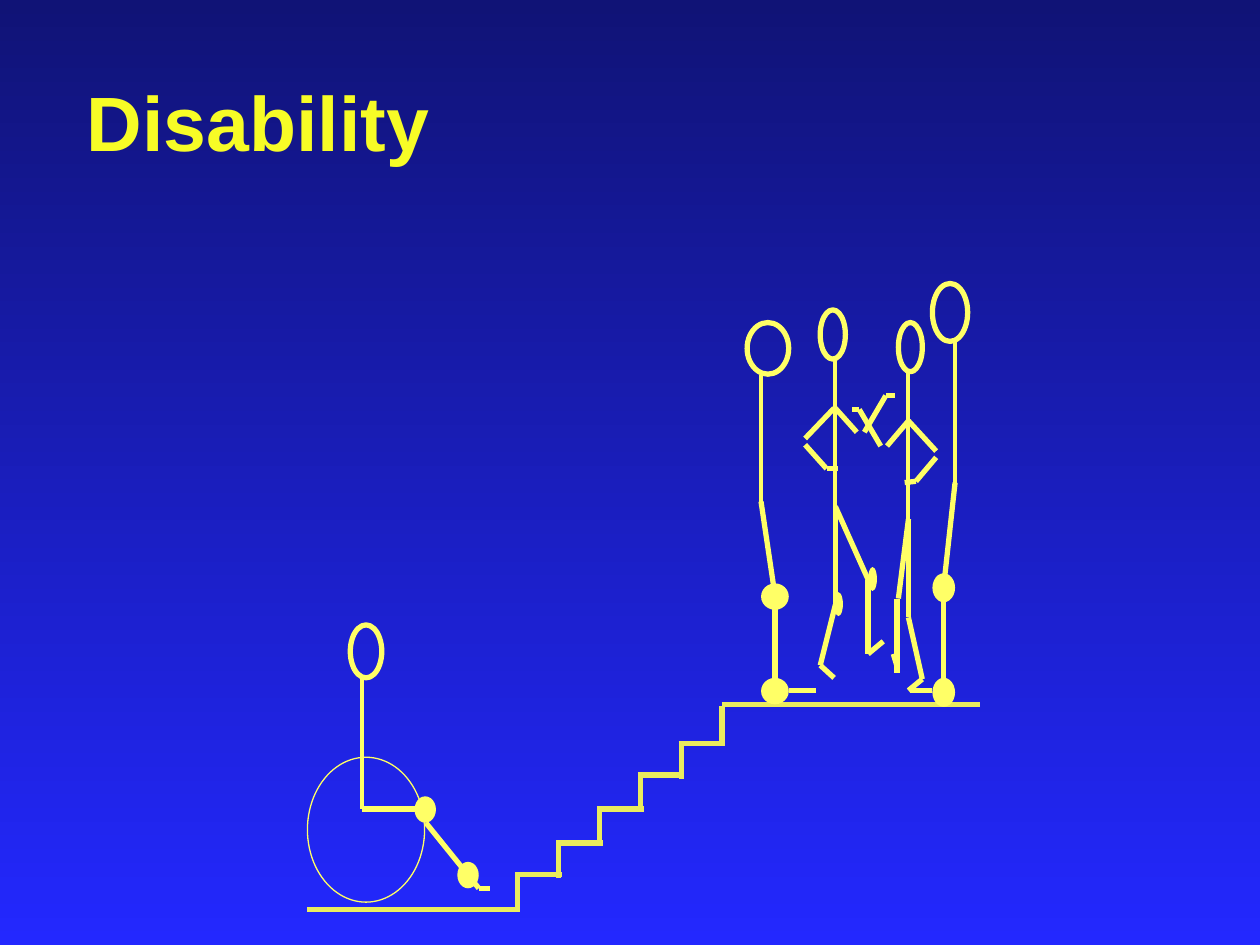
from itertools import pairwise

from lxml import etree
from pptx import Presentation
from pptx.dml.color import RGBColor
from pptx.enum.shapes import MSO_CONNECTOR, MSO_SHAPE
from pptx.enum.text import MSO_ANCHOR, PP_ALIGN
from pptx.oxml.ns import qn
from pptx.util import Inches, Pt

STRAIGHT = MSO_CONNECTOR.STRAIGHT
OVAL = MSO_SHAPE.OVAL
LEFT = PP_ALIGN.LEFT
MIDDLE = MSO_ANCHOR.MIDDLE

NIGHT = RGBColor(0x10, 0x13, 0x76)
BLUE = RGBColor(0x23, 0x28, 0xFF)
TITLE_YELLOW = RGBColor(0xF7, 0xFC, 0x26)
STAIR_YELLOW = RGBColor(0xEA, 0xEC, 0x5E)
FIGURE_YELLOW = RGBColor(0xFF, 0xFF, 0x66)

COLUMNS, ROWS = 100, 75
THIN, TRUNK, LIMB = 0.75, 2.25, 3
TITLE_LAYOUT = 5


class StickScene:
    """Draws stick figures and stairs on a slide divided into columns and rows."""

    def __init__(self, deck):
        self.column = deck.slide_width / COLUMNS
        self.row = deck.slide_height / ROWS
        self.page = deck.slides.add_slide(deck.slide_layouts[TITLE_LAYOUT])

    def place(self, across, down):
        return round(across * self.column), round(down * self.row)

    def backdrop(self, top, bottom):
        fill = self.page.background.fill
        fill.gradient()
        fill.gradient_angle = 270
        for stop, color in zip(fill.gradient_stops, (top, bottom)):
            stop.color.rgb = color

    def title(self, words, left, top, width, height):
        box = self.page.shapes.title
        box.left, box.top = self.place(left, top)
        box.width, box.height = self.place(width, height)
        frame = box.text_frame
        frame.text = words
        frame.word_wrap = True
        frame.vertical_anchor = MIDDLE
        para = frame.paragraphs[0]
        para.alignment = LEFT
        font = para.runs[0].font
        font.name, font.size, font.bold = "Arial", Pt(44), True
        font.color.rgb = TITLE_YELLOW

    def strokes(self, *points, weight=LIMB, color=FIGURE_YELLOW):
        for start, end in pairwise(points):
            line = self.page.shapes.add_connector(
                STRAIGHT, *self.place(*start), *self.place(*end))
            line.line.color.rgb = color
            line.line.width = Pt(weight)
            etree.SubElement(line._element.spPr, qn("a:effectLst"))

    def oval(self, left, top, width, height):
        shape = self.page.shapes.add_shape(
            OVAL, *self.place(left, top), *self.place(width, height))
        shape.shadow.inherit = False
        return shape

    def ring(self, *bounds, weight=LIMB):
        shape = self.oval(*bounds)
        shape.fill.background()
        shape.line.color.rgb = FIGURE_YELLOW
        shape.line.width = Pt(weight)

    def joint(self, *bounds):
        shape = self.oval(*bounds)
        shape.fill.solid()
        shape.fill.fore_color.rgb = FIGURE_YELLOW
        shape.line.fill.background()

    def stairs(self, left, pitch, tops, rise, tread):
        for step, top in enumerate(tops):
            across = left + step * pitch
            self.strokes((across, top), (across, top + rise), color=STAIR_YELLOW)
            if step < len(tops) - 1:
                self.strokes((across - 0.2, top), (across - 0.2 + tread, top),
                             color=STAIR_YELLOW)

    def figure(self, head, trunk, limbs, joints):
        self.ring(*head)
        self.strokes(*trunk, weight=TRUNK)
        for limb in limbs:
            self.strokes(*limb)
        for joint in joints:
            self.joint(*joint)


def main():
    deck = Presentation()
    deck.slide_width, deck.slide_height = Inches(10), Inches(7.5)
    scene = StickScene(deck)
    scene.backdrop(NIGHT, BLUE)
    scene.title("Disability", 5.9, 3.3, 88.9, 12.5)

    scene.strokes((24.4, 72.2), (41.3, 72.2), color=STAIR_YELLOW)
    scene.stairs(41.1, 3.24, (69.4, 66.9, 64.2, 61.5, 59, 56), 2.8, 3.7)
    scene.strokes((57.3, 55.9), (77.8, 55.9), color=STAIR_YELLOW)

    scene.ring(24.4, 60.1, 9.3, 11.5, weight=THIN)
    scene.figure(
        head=(27.8, 49.6, 2.5, 4.2),
        trunk=[(28.7, 53.8), (28.7, 64.2)],
        limbs=[[(28.7, 64.2), (33.8, 64.2)],
               [(33.8, 65.3), (38, 70.5), (38.9, 70.5)]],
        joints=[(36.3, 68.4, 1.7, 2.1), (32.9, 63.2, 1.7, 2.1)])

    scene.figure(
        head=(74, 22.5, 2.8, 4.6),
        trunk=[(75.8, 27.1), (75.8, 38.6)],
        limbs=[[(75.8, 38.3), (74.9, 46.5), (74.9, 54.8)],
               [(74, 54.8), (72.2, 54.8)]],
        joints=[(74, 45.5, 1.8, 2.3), (74, 53.8, 1.8, 2.3)])

    scene.figure(
        head=(65.1, 24.6, 2, 3.9),
        trunk=[(66.3, 28.5), (66.3, 40.2)],
        limbs=[[(66.3, 32.4), (68, 34.3)],
               [(68.6, 34.3), (70.3, 31.4), (71, 31.4)],
               [(66.2, 32.4), (63.9, 34.8)],
               [(63.9, 35.3), (65.6, 37.2), (66.5, 37.2)],
               [(66.3, 40.2), (66.3, 48), (65.1, 52.8), (66.2, 53.8)],
               [(66.3, 40.2), (68.9, 46), (68.9, 51.9), (70.1, 50.9)]],
        joints=[(66.2, 47, 0.7, 1.9), (68.9, 45, 0.7, 1.9)])

    scene.figure(
        head=(59.3, 25.6, 3.3, 4.1),
        trunk=[(60.4, 29.8), (60.4, 40.1)],
        limbs=[[(60.4, 39.8), (61.5, 47.2), (61.5, 54.8)],
               [(62.6, 54.8), (64.8, 54.8)]],
        joints=[(60.4, 46.3, 2.2, 2.1), (60.4, 53.8, 2.2, 2.1)])

    scene.figure(
        head=(71.3, 25.6, 1.9, 3.9),
        trunk=[(72.1, 29.5), (72.1, 41.2)],
        limbs=[[(72.1, 33.4), (70.4, 35.4)],
               [(69.9, 35.4), (68.2, 32.5), (67.6, 32.5)],
               [(72.1, 33.4), (74.3, 35.8)],
               [(74.3, 36.3), (72.7, 38.2), (71.8, 38.3)],
               [(72.1, 41.2), (72.1, 49), (73.2, 53.9), (72.1, 54.8)],
               [(72.1, 41.2), (71.3, 47.5)],
               [(71.2, 47.5), (71.2, 53.4)],
               [(71.2, 52.9), (70.9, 51.9)]],
        joints=[])

    deck.save("out.pptx")


if __name__ == "__main__":
    main()
